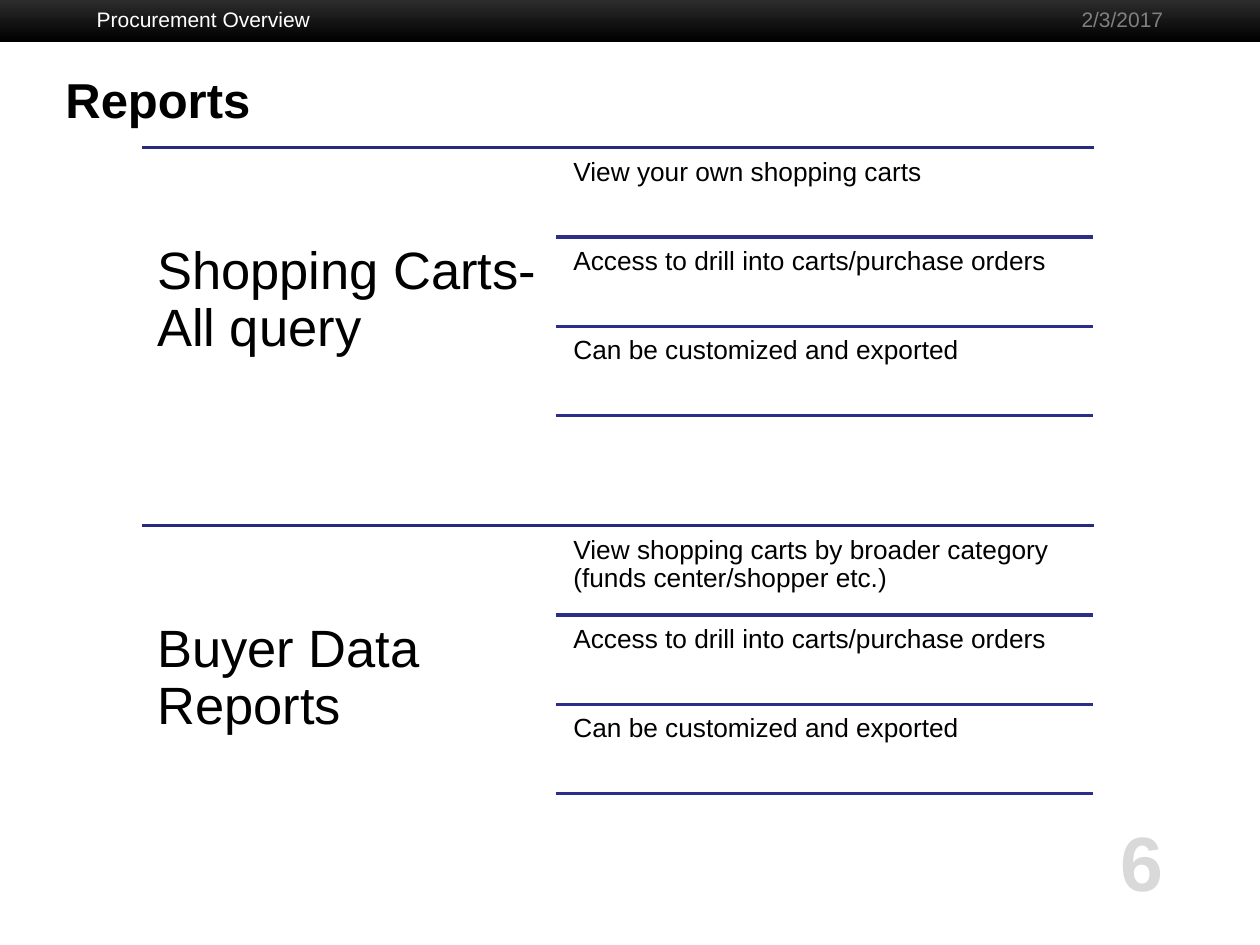
from lxml import etree
from pptx import Presentation
from pptx.dml.color import RGBColor
from pptx.enum.shapes import MSO_CONNECTOR, MSO_SHAPE
from pptx.enum.text import MSO_ANCHOR, PP_ALIGN
from pptx.oxml.ns import qn
from pptx.util import Cm, Pt

STRAIGHT = MSO_CONNECTOR.STRAIGHT
RECTANGLE = MSO_SHAPE.RECTANGLE
TOP, MIDDLE = MSO_ANCHOR.TOP, MSO_ANCHOR.MIDDLE
LEFT, RIGHT = PP_ALIGN.LEFT, PP_ALIGN.RIGHT

BLACK = RGBColor(0x00, 0x00, 0x00)
CHARCOAL = RGBColor(0x33, 0x33, 0x33)
GRAY = RGBColor(0x80, 0x80, 0x80)
PALE_GRAY = RGBColor(0xD9, 0xD9, 0xD9)
WHITE = RGBColor(0xFF, 0xFF, 0xFF)
NAVY = RGBColor(0x29, 0x29, 0x7D)
INDIGO = RGBColor(0x2D, 0x2D, 0x8A)


def add_text(shapes, text, place, insets, size, color,
             bold=False, align=LEFT, anchor=TOP, spacing=1.0):
    box = shapes.add_textbox(*[Cm(length) for length in place])
    left, top, right, bottom = [Cm(inset) for inset in insets]
    frame_format = {
        "word_wrap": True, "vertical_anchor": anchor,
        "margin_left": left, "margin_top": top,
        "margin_right": right, "margin_bottom": bottom,
    }
    for name, value in frame_format.items():
        setattr(box.text_frame, name, value)
    para = box.text_frame.paragraphs[0]
    para.alignment = align
    para.line_spacing = spacing
    span = para.add_run()
    span.text = text
    span_format = {"name": "Arial", "size": Pt(size), "bold": bold}
    for name, value in span_format.items():
        setattr(span.font, name, value)
    span.font.color.rgb = color


def add_rule(shapes, left, right, top, color):
    rule = shapes.add_connector(STRAIGHT, Cm(left), Cm(top), Cm(right), Cm(top))
    rule.line.color.rgb = color
    rule.line.width = Pt(2)
    etree.SubElement(rule._element.spPr, qn("a:effectLst"))


deck = Presentation()
deck.slide_width = Cm(25.4)
deck.slide_height = Cm(19.05)
page = deck.slides.add_slide(deck.slide_layouts[6])

band = page.shapes.add_shape(RECTANGLE, Cm(0), Cm(-0.13), Cm(25.4), Cm(0.97))
band.shadow.inherit = False
band.line.fill.background()
band.fill.gradient()
band.fill.gradient_angle = 270
for stop, color, position in zip(band.fill.gradient_stops, (CHARCOAL, BLACK), (0, 1)):
    stop.color.rgb = color
    stop.position = position

header_insets = (0.25, 0.13, 0.25, 0.13)
add_text(page.shapes, "Procurement Overview", (1.7, 0, 14.17, 0.84),
         header_insets, 12, WHITE)
add_text(page.shapes, "2/3/2017", (18.42, 0, 5.28, 0.84),
         header_insets, 12, GRAY, align=RIGHT)
add_text(page.shapes, "6", (19.68, 16.41, 4.02, 1.9),
         (0.25, 0, 0.25, 0), 44, PALE_GRAY, bold=True, align=RIGHT, anchor=MIDDLE)
add_text(page.shapes, "Reports", (1.07, 1.27, 22.02, 1.6),
         (0.25, 0.13, 0.25, 0.13), 28, BLACK, bold=True)

reports = [
    ("Shopping Carts- All query", [
        "View your own shopping carts",
        "Access to drill into carts/purchase orders",
        "Can be customized and exported",
    ]),
    ("Buyer Data Reports", [
        "View shopping carts by broader category (funds center/shopper etc.)",
        "Access to drill into carts/purchase orders",
        "Can be customized and exported",
    ]),
]
section_top, section_pitch = 2.97, 7.62
row_pitch, row_height, row_gap = 1.8, 1.73, 0.08

for section, (heading, features) in enumerate(reports):
    top = section_top + section * section_pitch
    group = page.shapes.add_group_shape()
    add_rule(group.shapes, 2.87, 22.05, top, NAVY)
    add_text(group.shapes, heading, (2.87, top, 8.33, 5.5),
             (0.3, 1.96, 0.3, 0.3), 30, BLACK, spacing=0.9)
    for row, feature in enumerate(features):
        row_top = top + row_gap + row * row_pitch
        add_text(group.shapes, feature, (11.41, row_top, 10.62, row_height),
                 (0.15, 0.15, 0.15, 0.15), 15, BLACK, spacing=0.9)
        add_rule(group.shapes, 11.2, 22.03, row_top + row_height, INDIGO)

deck.save("out.pptx")
